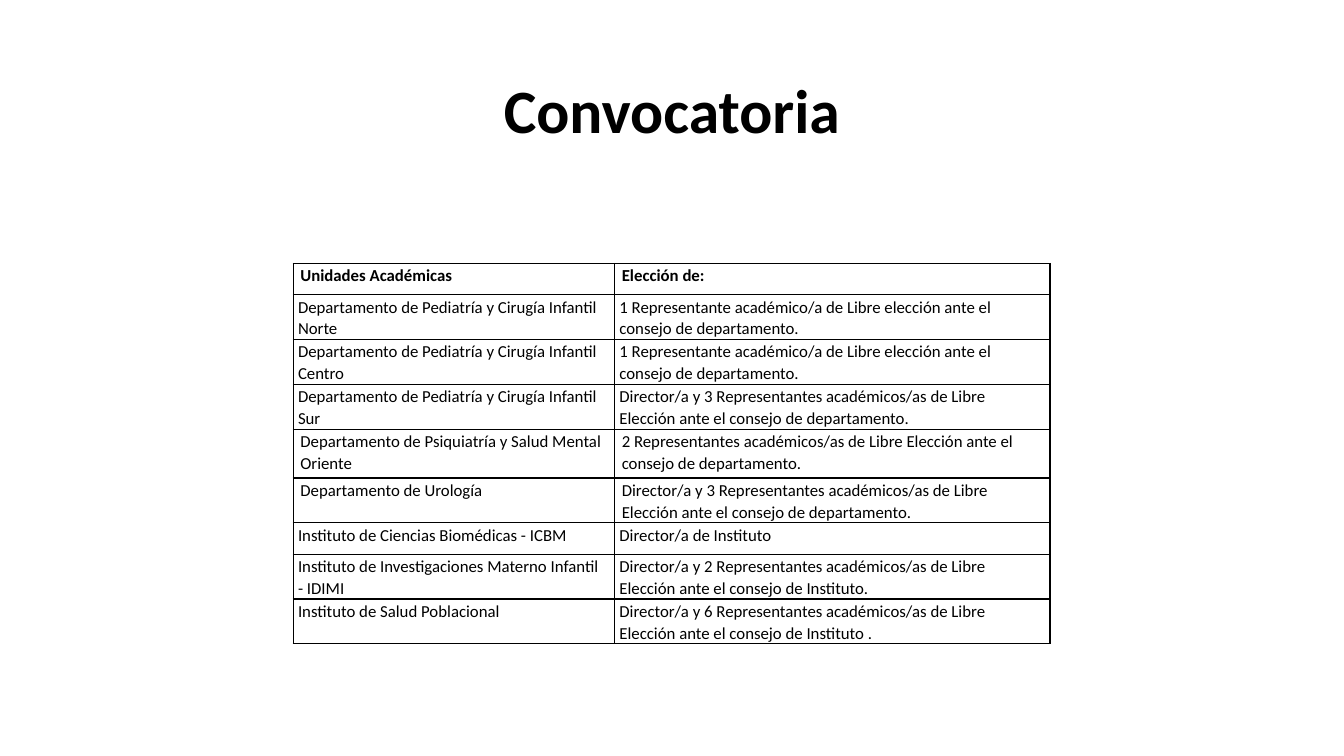
from lxml import etree
from pptx import Presentation
from pptx import util as u
from pptx.dml.color import RGBColor
from pptx.enum import text
from pptx.oxml.ns import qn

COLOURS = {"ink": "000000", "paper": "FFFFFF"}
ONE_LINE, TWO_LINES, ROOMY = 0.79, 1.13, 1.23
NARROW, WIDE = 0.12, 0.18
FREE_SEAT = "1 Representante académico/a de Libre elección ante el consejo de departamento."
DIRECTOR_AND_THREE = (
    "Director/a y 3 Representantes académicos/as de Libre Elección "
    "ante el consejo de departamento."
)

# Each row: height, side margin, academic unit, posts to elect
ROWS = [
    (ONE_LINE, WIDE, "Unidades Académicas", "Elección de:"),
    (TWO_LINES, NARROW, "Departamento de Pediatría y Cirugía Infantil Norte", FREE_SEAT),
    (TWO_LINES, NARROW, "Departamento de Pediatría y Cirugía Infantil Centro", FREE_SEAT),
    (TWO_LINES, NARROW, "Departamento de Pediatría y Cirugía Infantil Sur", DIRECTOR_AND_THREE),
    (ROOMY, WIDE, "Departamento de Psiquiatría y Salud Mental Oriente",
     "2 Representantes académicos/as de Libre Elección ante el consejo de departamento."),
    (TWO_LINES, WIDE, "Departamento de Urología", DIRECTOR_AND_THREE),
    (ONE_LINE, NARROW, "Instituto de Ciencias Biomédicas - ICBM", "Director/a de Instituto"),
    (TWO_LINES, NARROW, "Instituto de Investigaciones Materno Infantil  - IDIMI",
     "Director/a y 2 Representantes académicos/as de Libre Elección ante el consejo de Instituto."),
    (TWO_LINES, NARROW, "Instituto de Salud Poblacional",
     "Director/a y 6 Representantes académicos/as de Libre Elección ante el consejo de Instituto ."),
]


class SlideBuilder:
    def __init__(self, page, font):
        self.page = page
        self.font = font

    def background(self, colour):
        fill = self.page.background.fill
        fill.solid()
        fill.fore_color.rgb = RGBColor.from_string(COLOURS[colour])

    def format_runs(self, para, size, bold):
        for span in para.runs:
            span.font.name = self.font
            span.font.size = u.Pt(size)
            span.font.bold = bold
            span.font.color.rgb = RGBColor.from_string(COLOURS["ink"])

    def title(self, words, left, top, width, height):
        box = self.page.shapes.title
        box.left, box.top = u.Cm(left), u.Cm(top)
        box.width, box.height = u.Cm(width), u.Cm(height)
        frame = box.text_frame
        frame.text = words
        frame.vertical_anchor = text.MSO_ANCHOR.MIDDLE
        para = frame.paragraphs[0]
        para.alignment = text.PP_ALIGN.CENTER
        para.line_spacing = 0.9
        self.format_runs(para, 44, True)

    def table(self, rows, left, top, widths):
        height = sum(row[0] for row in rows)
        table = self.page.shapes.add_table(
            len(rows), len(widths), u.Cm(left), u.Cm(top),
            u.Cm(sum(widths)), u.Cm(height)).table
        table.first_row = table.horz_banding = False
        for column, width in zip(table.columns, widths):
            column.width = u.Cm(width)
        for index, (row_height, margin, *entries) in enumerate(rows):
            table.rows[index].height = u.Cm(row_height)
            for column, words in enumerate(entries):
                self.cell(table.cell(index, column), words, margin, bold=index == 0)

    def cell(self, cell, words, margin, bold):
        cell.text = words
        cell.margin_left = cell.margin_right = u.Cm(margin)
        cell.margin_top, cell.margin_bottom = u.Cm(0.02), 0
        para = cell.text_frame.paragraphs[0]
        para.line_spacing = 1.07
        para.space_after = u.Pt(8)
        self.format_runs(para, 12, bold)
        self.borders(cell)
        cell.fill.background()

    def borders(self, cell):
        properties = cell._tc.get_or_add_tcPr()
        for side in ("lnL", "lnR", "lnT", "lnB"):
            line = etree.SubElement(properties, qn(f"a:{side}"), w=str(u.Pt(1)))
            fill = etree.SubElement(line, qn("a:solidFill"))
            etree.SubElement(fill, qn("a:srgbClr"), val=COLOURS["ink"])


def main():
    deck = Presentation()
    deck.slide_width, deck.slide_height = u.Cm(33.87), u.Cm(19.05)
    title_only = deck.slide_layouts[5]
    builder = SlideBuilder(deck.slides.add_slide(title_only), "Calibri")
    builder.background("paper")
    builder.title("Convocatoria", 2.33, 1.01, 29.21, 3.68)
    builder.table(ROWS, 7.39, 6.64, (8.1, 10.97))
    deck.save("out.pptx")


if __name__ == "__main__":
    main()
